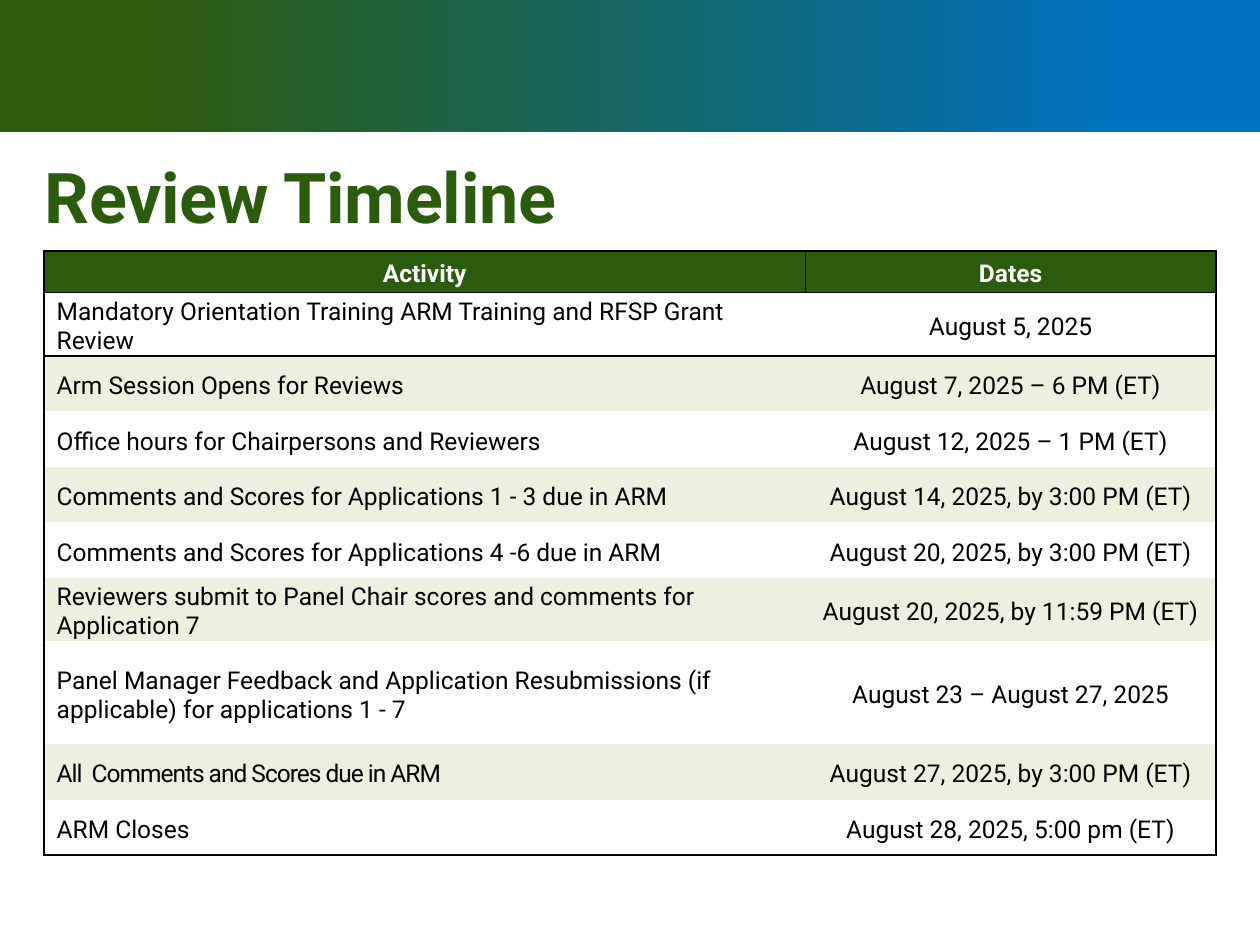
from lxml import etree
from pptx import Presentation, util as u
from pptx.dml.color import RGBColor
from pptx.enum import shapes, text
from pptx.oxml.ns import qn

GREEN = RGBColor(0x2B, 0x5C, 0x0D)
BLUE = RGBColor(0x00, 0x71, 0xBC)
PALE = RGBColor(0xEB, 0xF1, 0xDE)
WHITE = RGBColor(0xFF, 0xFF, 0xFF)
BLACK = RGBColor(0, 0, 0)
NO_STYLE = "{2D5ABB26-0587-4C30-8999-92F81FD0307C}"

# Activity, date, row height, letter spacing of the activity
ROWS = [
    ("Mandatory Orientation Training ARM Training and RFSP Grant Review",
     "August 5, 2025", 31.7, 0),
    ("Arm Session Opens for Reviews", "August 7, 2025 – 6 PM (ET)", 31.7, 0),
    ("Office hours for Chairpersons and Reviewers",
     "August 12, 2025 – 1 PM (ET)", 31.7, 0),
    ("Comments and Scores for Applications 1 - 3 due in ARM",
     "August 14, 2025, by 3:00 PM (ET)", 31.7, 0),
    ("Comments and Scores for Applications 4 -6 due in ARM",
     "August 20, 2025, by 3:00 PM (ET)", 31.7, 0),
    ("Reviewers submit to Panel Chair scores and comments for Application 7",
     "August 20, 2025, by 11:59 PM (ET)", 31.7, 0),
    ("Panel Manager Feedback and Application Resubmissions "
     "(if applicable) for applications 1 - 7",
     "August 23 – August 27, 2025", 59, 0),
    ("All  Comments and Scores due in ARM",
     "August 27, 2025, by 3:00 PM (ET)", 31.7, -0.6),
    ("ARM Closes", "August 28, 2025, 5:00 pm (ET)", 31.7, 0),
]


class Deck:
    font = "Roboto"

    def __init__(self, slide):
        self.s = slide

    def run(self, p, words, size, color, bold=False, spacing=0):
        r = p.add_run()
        r.text = words
        f = r.font
        f.name, f.size, f.bold = self.font, u.Pt(size), bold
        f.color.rgb = color
        if spacing:
            r._r.get_or_add_rPr().set("spc", str(round(spacing * 100)))

    def band(self, width, height):
        sp = self.s.shapes.add_shape(shapes.MSO_SHAPE.RECTANGLE, 0, 0,
                                     u.Pt(width), u.Pt(height))
        sp.shadow.inherit = False
        sp.line.fill.background()
        sp.fill.gradient()
        sp.fill.gradient_angle = 180
        for stop, pos, color in zip(sp.fill.gradient_stops,
                                    (0.12, 0.88), (BLUE, GREEN)):
            stop.position = pos
            stop.color.rgb = color

    def title(self, words, left, top, width, height):
        sp = self.s.shapes.title
        sp.left, sp.top = u.Pt(left), u.Pt(top)
        sp.width, sp.height = u.Pt(width), u.Pt(height)
        tf = sp.text_frame
        tf.margin_left = tf.margin_right = tf.margin_bottom = 0
        tf.margin_top = u.Pt(1)
        tf.vertical_anchor = text.MSO_ANCHOR.TOP
        tf.auto_size = text.MSO_AUTO_SIZE.NONE
        p = tf.paragraphs[0]
        p.alignment = text.PP_ALIGN.LEFT
        self.run(p, words, 40, GREEN, True, -0.1)

    def borders(self, cell, sides):
        tcPr = cell._tc.get_or_add_tcPr()
        for i, side in enumerate(s for s in "LRTB" if s in sides):
            ln = etree.Element(qn("a:ln" + side), w=str(u.Pt(1)))
            fill = etree.SubElement(ln, qn("a:solidFill"))
            etree.SubElement(fill, qn("a:srgbClr"), val=str(BLACK))
            tcPr.insert(i, ln)

    def cell(self, cell, words, fill, color, sides, centred=True,
             bold=False, spacing=0):
        cell.margin_left = cell.margin_right = cell.margin_bottom = 0
        cell.margin_top = u.Pt(3)
        cell.vertical_anchor = text.MSO_ANCHOR.MIDDLE
        if fill is None:
            cell.fill.background()
        else:
            cell.fill.solid()
            cell.fill.fore_color.rgb = fill
        self.borders(cell, sides)
        p = cell.text_frame.paragraphs[0]
        if centred:
            p.alignment = text.PP_ALIGN.CENTER
        else:
            p._p.get_or_add_pPr().set("marL", str(u.Pt(7.2)))
        self.run(p, words, 14, color, bold, spacing)

    def timeline(self, left, top, col_widths, header, header_height, rows):
        heights = [header_height] + [row[2] for row in rows]
        frame = self.s.shapes.add_table(
            len(heights), len(col_widths), u.Pt(left), u.Pt(top),
            u.Pt(sum(col_widths)), u.Pt(sum(heights)))
        tbl = frame.table
        tbl.horz_banding = False
        tbl._tbl.tblPr.find(qn("a:tableStyleId")).text = NO_STYLE
        for col, width in zip(tbl.columns, col_widths):
            col.width = u.Pt(width)
        for row, height in zip(tbl.rows, heights):
            row.height = u.Pt(height)
        # Header row
        for c, words in enumerate(header):
            self.cell(tbl.cell(0, c), words, GREEN, WHITE, "LRTB", bold=True)
        # Striped body inside an outer frame
        for n, (activity, date, _, spacing) in enumerate(rows, 1):
            fill = PALE if n % 2 == 0 else None
            edge = "T" if n == 1 else "B" if n == len(rows) else ""
            self.cell(tbl.cell(n, 0), activity, fill, BLACK, "L" + edge,
                      centred=False, spacing=spacing)
            self.cell(tbl.cell(n, 1), date, fill, BLACK, "R" + edge)


def main():
    prs = Presentation()
    prs.slide_width, prs.slide_height = u.Pt(720), u.Pt(540)
    deck = Deck(prs.slides.add_slide(prs.slide_layouts[5]))
    deck.band(720, 75.5)
    deck.title("Review Timeline", 25.5, 86.5, 377, 50)
    deck.timeline(25.2, 143.5, (435, 234.7), ("Activity", "Dates"), 23.8, ROWS)
    prs.save("out.pptx")


if __name__ == "__main__":
    main()
